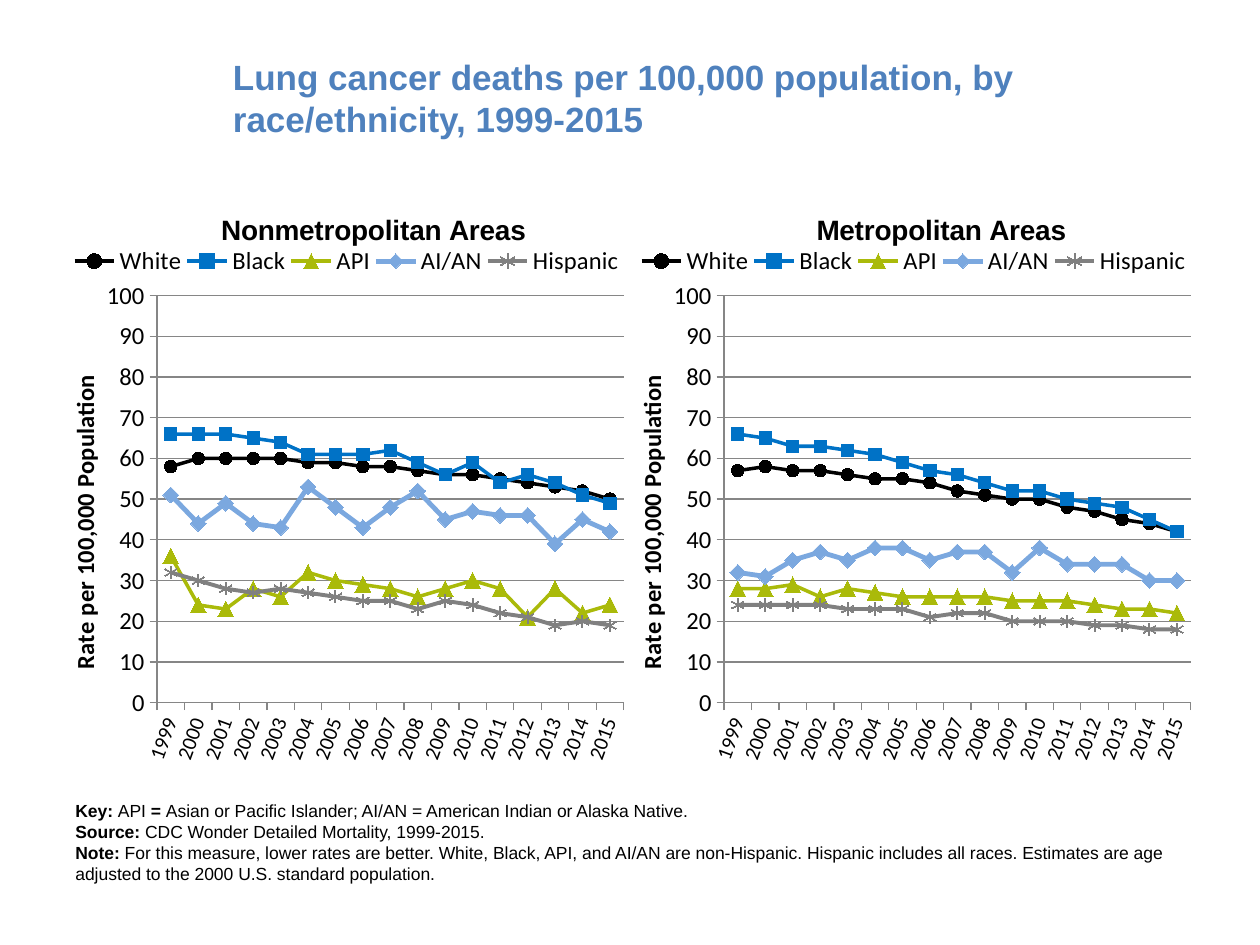
from lxml import etree
from pptx import Presentation
from pptx.chart.data import CategoryChartData
from pptx.dml.color import RGBColor
from pptx.enum.chart import XL_CHART_TYPE, XL_LEGEND_POSITION, XL_MARKER_STYLE, XL_TICK_MARK
from pptx.enum.text import MSO_ANCHOR
from pptx.oxml.ns import qn
from pptx.util import Inches, Pt

LINE_MARKERS = XL_CHART_TYPE.LINE_MARKERS
LEGEND_TOP = XL_LEGEND_POSITION.TOP
TICK_OUTSIDE = XL_TICK_MARK.OUTSIDE
MIDDLE = MSO_ANCHOR.MIDDLE
CIRCLE, SQUARE = XL_MARKER_STYLE.CIRCLE, XL_MARKER_STYLE.SQUARE
TRIANGLE, DIAMOND, STAR = XL_MARKER_STYLE.TRIANGLE, XL_MARKER_STYLE.DIAMOND, XL_MARKER_STYLE.STAR

BLACK = RGBColor(0x00, 0x00, 0x00)
TITLE_BLUE = RGBColor(0x4F, 0x81, 0xBD)
BLUE = RGBColor(0x00, 0x72, 0xC6)
GREEN = RGBColor(0xAA, 0xBA, 0x0A)
LIGHT_BLUE = RGBColor(0x7B, 0xA8, 0xDF)
GRAY = RGBColor(0x80, 0x80, 0x80)
AXIS_GRAY = RGBColor(0x86, 0x86, 0x86)

HEADLINE = "Lung cancer deaths per 100,000 population, by race/ethnicity, 1999-2015"
AXIS_TITLE = "Rate per 100,000 Population"
YEARS = [str(year) for year in range(1999, 2016)]

# group: color, line width, marker style, marker size
GROUPS = {
    "White": (BLACK, 2, CIRCLE, 7),
    "Black": (BLUE, 2, SQUARE, 7),
    "API": (GREEN, 2, TRIANGLE, 9),
    "AI/AN": (LIGHT_BLUE, 2.75, DIAMOND, 9),
    "Hispanic": (GRAY, 2.25, STAR, 7),
}

# area, left share of its title, rates in the order of GROUPS
AREAS = [
    ("Nonmetropolitan Areas", 0.27, [
        [58, 60, 60, 60, 60, 59, 59, 58, 58, 57, 56, 56, 55, 54, 53, 52, 50],
        [66, 66, 66, 65, 64, 61, 61, 61, 62, 59, 56, 59, 54, 56, 54, 51, 49],
        [36, 24, 23, 28, 26, 32, 30, 29, 28, 26, 28, 30, 28, 21, 28, 22, 24],
        [51, 44, 49, 44, 43, 53, 48, 43, 48, 52, 45, 47, 46, 46, 39, 45, 42],
        [32, 30, 28, 27, 28, 27, 26, 25, 25, 23, 25, 24, 22, 21, 19, 20, 19],
    ]),
    ("Metropolitan Areas", 0.32, [
        [57, 58, 57, 57, 56, 55, 55, 54, 52, 51, 50, 50, 48, 47, 45, 44, 42],
        [66, 65, 63, 63, 62, 61, 59, 57, 56, 54, 52, 52, 50, 49, 48, 45, 42],
        [28, 28, 29, 26, 28, 27, 26, 26, 26, 26, 25, 25, 25, 24, 23, 23, 22],
        [32, 31, 35, 37, 35, 38, 38, 35, 37, 37, 32, 38, 34, 34, 34, 30, 30],
        [24, 24, 24, 24, 23, 23, 23, 21, 22, 22, 20, 20, 20, 19, 19, 18, 18],
    ]),
]

# each footnote is a list of (text, bold)
FOOTNOTES = [
    [("Key: ", True), ("API ", False), ("= ", True),
     ("Asian or Pacific Islander; AI/AN = American Indian or Alaska Native.", False)],
    [("Source: ", True), ("CDC Wonder Detailed Mortality, 1999-2015.", False)],
    [("Note: ", True),
     ("For this measure, lower rates are better. White, Black, API, and AI/AN are non-Hispanic. "
      "Hispanic includes all races. Estimates are age adjusted to the 2000 U.S. standard "
      "population.", False)],
]

CHART_LEFT, CHART_TOP, CHART_SIZE = 0.5, 1.6, 4.5


def set_font(font, name, size, color=BLACK, bold=False):
    font.name, font.size, font.bold = name, Pt(size), bold
    font.color.rgb = color


def set_layout(part, index, inner=False, **shares):
    """Place a chart part by shares of the chart's size; index is the layout's place in the part."""
    for old in part.findall(qn("c:layout")):
        part.remove(old)
    layout = etree.Element(qn("c:layout"))
    manual = etree.SubElement(layout, qn("c:manualLayout"))
    settings = [("layoutTarget", "inner")] if inner else []
    settings += [("xMode", "edge"), ("yMode", "edge"), *shares.items()]
    for tag, value in settings:
        etree.SubElement(manual, qn(f"c:{tag}")).set("val", str(value))
    part.insert(index, layout)


def style_axis(axis, size):
    axis.major_tick_mark = TICK_OUTSIDE
    axis.format.line.color.rgb = AXIS_GRAY
    set_font(axis.tick_labels.font, "Calibri", size)


def style_series(series, color, width, marker_style, marker_size):
    series.smooth = False
    series.format.line.color.rgb = color
    series.format.line.width = Pt(width)
    marker = series.marker
    marker.style, marker.size = marker_style, marker_size
    marker.format.line.color.rgb = color
    if marker_style == STAR:
        marker.format.fill.background()
    else:
        marker.format.fill.solid()
        marker.format.fill.fore_color.rgb = color


def add_rate_chart(slide, left, area, title_share, rates):
    data = CategoryChartData(number_format="0")
    data.categories = YEARS
    for group, values in zip(GROUPS, rates):
        data.add_series(group, values)
    chart = slide.shapes.add_chart(LINE_MARKERS, Inches(left), Inches(CHART_TOP),
                                   Inches(CHART_SIZE), Inches(CHART_SIZE), data).chart
    set_font(chart.font, "Arial", 10)

    chart.has_title = True
    heading = chart.chart_title.text_frame
    heading.text = area
    set_font(heading.paragraphs[0].font, "Arial", 16, bold=True)
    set_layout(chart.chart_title._element, 1, x=title_share, y=0.01)

    chart.has_legend = True
    legend = chart.legend
    legend.position, legend.include_in_layout = LEGEND_TOP, False
    set_font(legend.font, "Calibri", 14)
    set_layout(legend._element, 1, x=0.01, y=0.07, w=0.98, h=0.07)

    years, scale = chart.category_axis, chart.value_axis
    style_axis(years, 12)
    years._element.find(qn("c:txPr")).find(qn("a:bodyPr")).set("rot", str(-70 * 60000))
    style_axis(scale, 14)
    scale.minimum_scale, scale.maximum_scale, scale.major_unit = 0, 100, 10
    scale.tick_labels.number_format = "0"
    scale.tick_labels.number_format_is_linked = False
    scale.has_major_gridlines = True
    scale.major_gridlines.format.line.color.rgb = AXIS_GRAY
    caption = scale.axis_title.text_frame
    caption.text = AXIS_TITLE
    set_font(caption.paragraphs[0].font, "Calibri", 14, bold=True)

    plot = chart.plots[0]
    plot.vary_by_categories = False
    for series, style in zip(plot.series, GROUPS.values()):
        style_series(series, *style)
    plot_area = chart._chartSpace.find(qn("c:chart")).find(qn("c:plotArea"))
    set_layout(plot_area, 0, inner=True, x=0.166, y=0.166, w=0.823, h=0.718)


def add_text_frame(slide, left, top, width, height):
    frame = slide.shapes.add_textbox(Inches(left), Inches(top),
                                     Inches(width), Inches(height)).text_frame
    frame.word_wrap = True
    return frame


def main():
    deck = Presentation()
    deck.slide_width, deck.slide_height = Inches(10), Inches(7.5)
    slide = deck.slides.add_slide(deck.slide_layouts[6])

    headline = add_text_frame(slide, 1.75, 0.3, 7.75, 0.95)
    headline.vertical_anchor = MIDDLE
    headline.text = HEADLINE
    set_font(headline.paragraphs[0].font, "Arial", 20, TITLE_BLUE, bold=True)

    for column, area in enumerate(AREAS):
        add_rate_chart(slide, CHART_LEFT + column * CHART_SIZE, *area)

    notes = add_text_frame(slide, 0.5, 6.3, 9, 0.77)
    for number, pieces in enumerate(FOOTNOTES):
        paragraph = notes.add_paragraph() if number else notes.paragraphs[0]
        for text, bold in pieces:
            run = paragraph.add_run()
            run.text = text
            set_font(run.font, "Arial", 10, bold=bold)

    deck.save("out.pptx")


if __name__ == "__main__":
    main()
